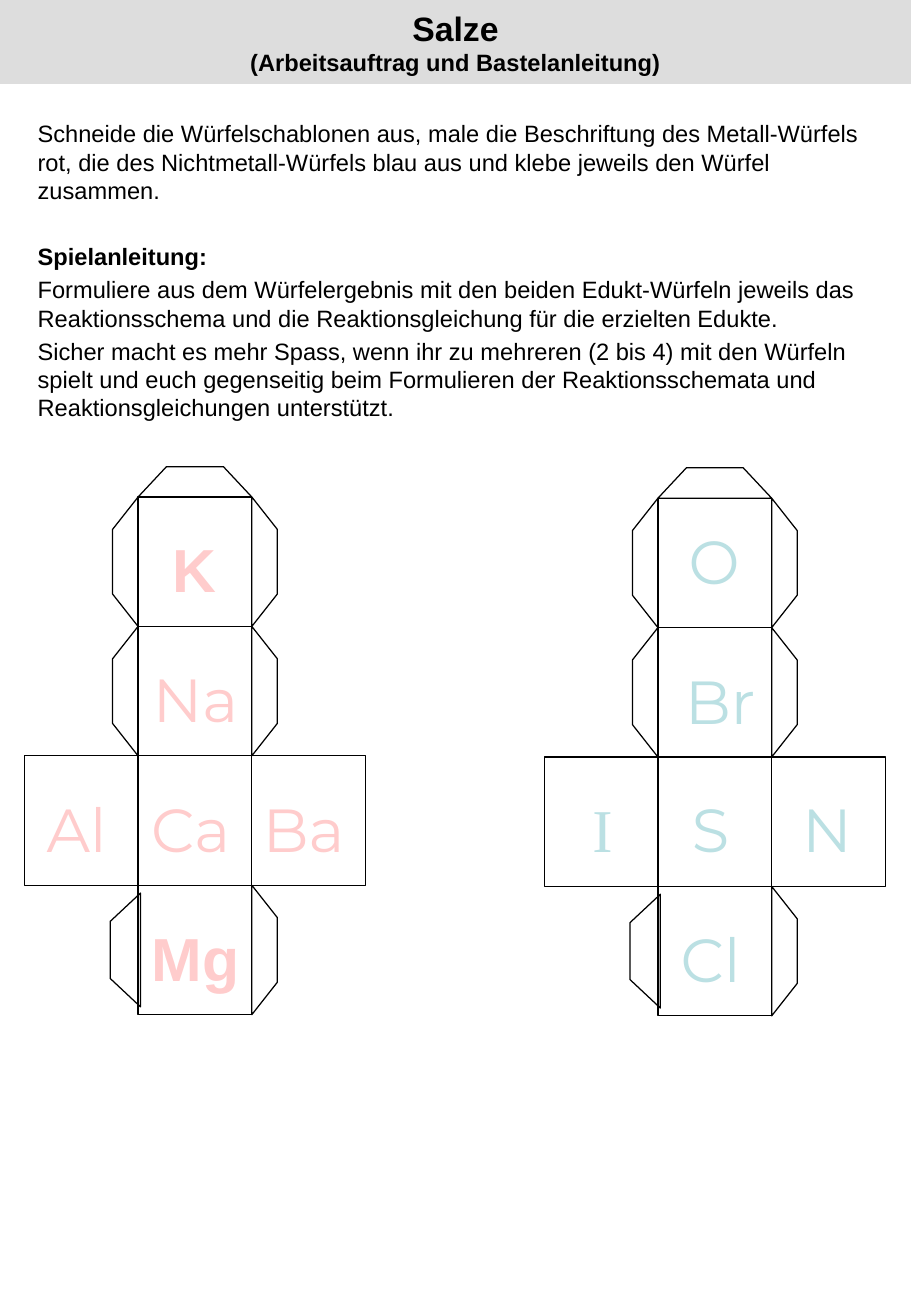
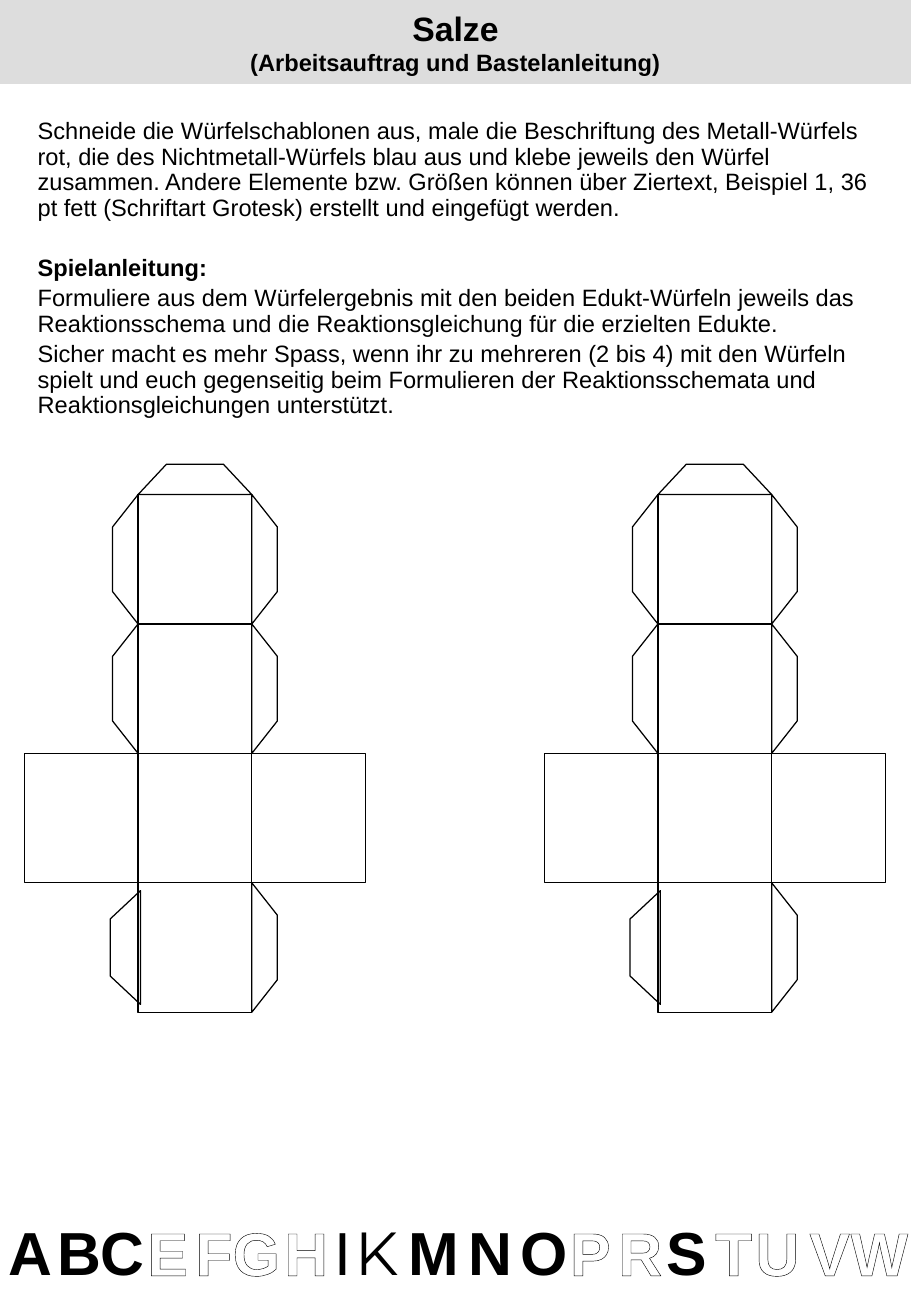
from lxml.etree import SubElement as Sub
from pptx import Presentation as Deck
from pptx.dml.color import RGBColor as Rgb
from pptx.enum.shapes import MSO_SHAPE as Kind
from pptx.enum.text import MSO_ANCHOR as Anchor, MSO_AUTO_SIZE as Fit, PP_ALIGN as Align
from pptx.oxml.ns import qn
from pptx.util import Inches, Pt

BLACK, WHITE, GREY = "000000", "FFFFFF", "DDDDDD"
RED, BLUE = "FFCCCC", "BBE0E3"
SANS, ROUND, SERIF = "Arial", "Montserrat", "Times New Roman"
CELLS = [(1, 0), (1, 1), (1, 2), (2, 2), (1, 3), (0, 2)]
TASK = ("Schneide die Würfelschablonen aus, male die Beschriftung des Metall-Würfels rot, "
        "die des Nichtmetall-Würfels blau aus und klebe jeweils den Würfel zusammen.")
EXTRA = (" Andere Elemente bzw. Größen können über Ziertext, Beispiel 1, 36 pt fett "
         "(Schriftart Grotesk) erstellt und eingefügt werden.")
RULES = [
    "Formuliere aus dem Würfelergebnis mit den beiden Edukt-Würfeln jeweils das "
    "Reaktionsschema und die Reaktionsgleichung für die erzielten Edukte.",
    "Sicher macht es mehr Spass, wenn ihr zu mehreren (2 bis 4) mit den Würfeln spielt und "
    "euch gegenseitig beim Formulieren der Reaktionsschemata und Reaktionsgleichungen "
    "unterstützt.",
]
METALS = [("K", 1.4, 0.24, SANS), ("Na", 1.41, 1.31, ROUND), ("Al", 0.43, 2.38, ROUND),
          ("Ca", 1.37, 2.38, ROUND), ("Ba", 2.3, 2.38, ROUND), ("Mg", 1.41, 3.44, SANS)]
OTHERS = [("Cl", 1.37, 3.44, ROUND), ("I", 0.48, 2.37, SERIF), ("S", 1.37, 2.37, ROUND),
          ("N", 2.33, 2.37, ROUND), ("Br", 1.45, 1.31, ROUND), ("O", 1.4, 0.16, ROUND)]
SOLID, THIN, LIGHT, HOLLOW = ((SANS, BLACK, True), (SANS, BLACK, False),
                              (ROUND, BLACK, False), (SANS, WHITE, True))
GLYPHS = [
    ("A", 0.25, SOLID), ("B", 0.65, SOLID), ("C", 1.01, SOLID), ("E", 1.38, HOLLOW),
    ("F", 1.76, HOLLOW), ("G", 2.11, HOLLOW), ("H", 2.52, HOLLOW), ("I", 2.82, THIN),
    ("K", 3.1, LIGHT), ("M", 3.57, SOLID), ("N", 4.04, SOLID), ("O", 4.48, SOLID),
    ("P", 4.86, HOLLOW), ("R", 5.27, HOLLOW), ("S", 5.65, SOLID), ("T", 6.04, HOLLOW),
    ("U", 6.4, HOLLOW), ("V", 6.83, HOLLOW), ("W", 7.24, HOLLOW),
]


def color(code):
    return Rgb.from_string(code)


def place(shape, left, top, wide, tall):
    shape.left, shape.top = Inches(left), Inches(top)
    shape.width, shape.height = Inches(wide), Inches(tall)


def write(para, text, size, bold=False, face=SANS, code=BLACK):
    run = para.add_run()
    run.text = text
    font = run.font
    font.size, font.bold, font.name = Pt(size), bold, face
    font.color.rgb = color(code)
    return run


def head(slide):
    title = slide.shapes.title
    place(title, 0, 0, 7.5, 0.69)
    title.fill.solid()
    title.fill.fore_color.rgb = color(GREY)
    frame = title.text_frame
    frame.auto_size, frame.vertical_anchor = Fit.NONE, Anchor.MIDDLE
    para = frame.paragraphs[0]
    para.alignment = Align.CENTER
    write(para, "Salze", 20, True)
    para.add_line_break()
    write(para, "(Arbeitsauftrag und Bastelanleitung)", 14, True)


def guide(slide, task, lead):
    body = slide.placeholders[1]
    place(body, 0.21, 0.93, 7.09, 2.68)
    frame = body.text_frame
    frame.auto_size, frame.vertical_anchor = Fit.NONE, Anchor.TOP
    for i, text in enumerate([task, "Spielanleitung:", *RULES]):
        para = frame.paragraphs[0] if i == 0 else frame.add_paragraph()
        para.alignment = Align.LEFT
        para.line_spacing = lead
        para.space_before = Pt(5.6 + 16.8 * lead if i == 1 else 2.8)
        props = para._p.get_or_add_pPr()
        props.set("marL", "0")
        props.set("indent", "0")
        Sub(props, qn("a:buNone"))
        write(para, text, 14, i == 1)


def glyph(shapes, text, mid, top, wide, face, code, bold):
    box = shapes.add_textbox(Inches(mid - wide / 2), Inches(top), Inches(wide), Inches(0.58))
    frame = box.text_frame
    frame.word_wrap = False
    frame.margin_left = frame.margin_right = 0
    para = frame.paragraphs[0]
    para.alignment = Align.CENTER
    props = write(para, text, 36, bold, face, code)._r.get_or_add_rPr()
    line = Sub(props, qn("a:ln"), w=str(Pt(0.75)))
    Sub(Sub(line, qn("a:solidFill")), qn("a:srgbClr"), val=BLACK)
    props.insert(0, line)


def trace(shape):
    shape.shadow.inherit = False
    shape.fill.background()
    shape.line.color.rgb = color(BLACK)
    shape.line.width = Pt(0.75)


def flap(shapes, x, y, span, depth, flat=False):
    spots = [(0, 0), (depth, span / 4), (depth, span * 3 / 4), (0, span)]
    if flat:
        spots = [(b, a) for a, b in spots]
    spots = [(Inches(x + a), Inches(y + b)) for a, b in spots]
    pen = shapes.build_freeform(*spots[0])
    pen.add_line_segments(spots[1:], close=True)
    trace(pen.convert_to_shape())


def net(slide, left, top, signs=(), code=BLACK, wide=2.81, tall=4.26):
    shapes = slide.shapes.add_group_shape().shapes
    w, h = wide / 3, tall / 4
    for col, row in CELLS:
        trace(shapes.add_shape(Kind.RECTANGLE, Inches(left + col * w), Inches(top + row * h),
                               Inches(w), Inches(h)))
    flap(shapes, left + w, top, w, -0.25, True)
    for row in (0, 1, 3):
        y = top + row * h
        flap(shapes, left + 2 * w, y, h, 0.21)
        if row < 3:
            flap(shapes, left + w, y, h, -0.21)
    flap(shapes, left + w + 0.02, top + 3 * h + (h - w) / 2, w, -0.25)
    for text, x, y, face in signs:
        glyph(shapes, text, left + x, top + y, 0.8, face, code, face == SANS)


def sheet(deck, task, lead):
    slide = deck.slides.add_slide(deck.slide_layouts[1])
    head(slide)
    guide(slide, task, lead)
    return slide


def main():
    deck = Deck()
    deck.slide_width, deck.slide_height = Inches(7.5), Inches(10.83)
    slide = sheet(deck, TASK, 1.0)
    net(slide, 0.2, 4.09, METALS, RED)
    net(slide, 4.48, 4.1, OTHERS, BLUE)
    slide = sheet(deck, TASK + EXTRA, 0.9)
    for left in (0.2, 4.48):
        net(slide, left, 4.07)
    for text, mid, (face, code, bold) in GLYPHS:
        glyph(slide.shapes, text, mid, 9.95, 0.48, face, code, bold)
    deck.save("out.pptx")


if __name__ == "__main__":
    main()
